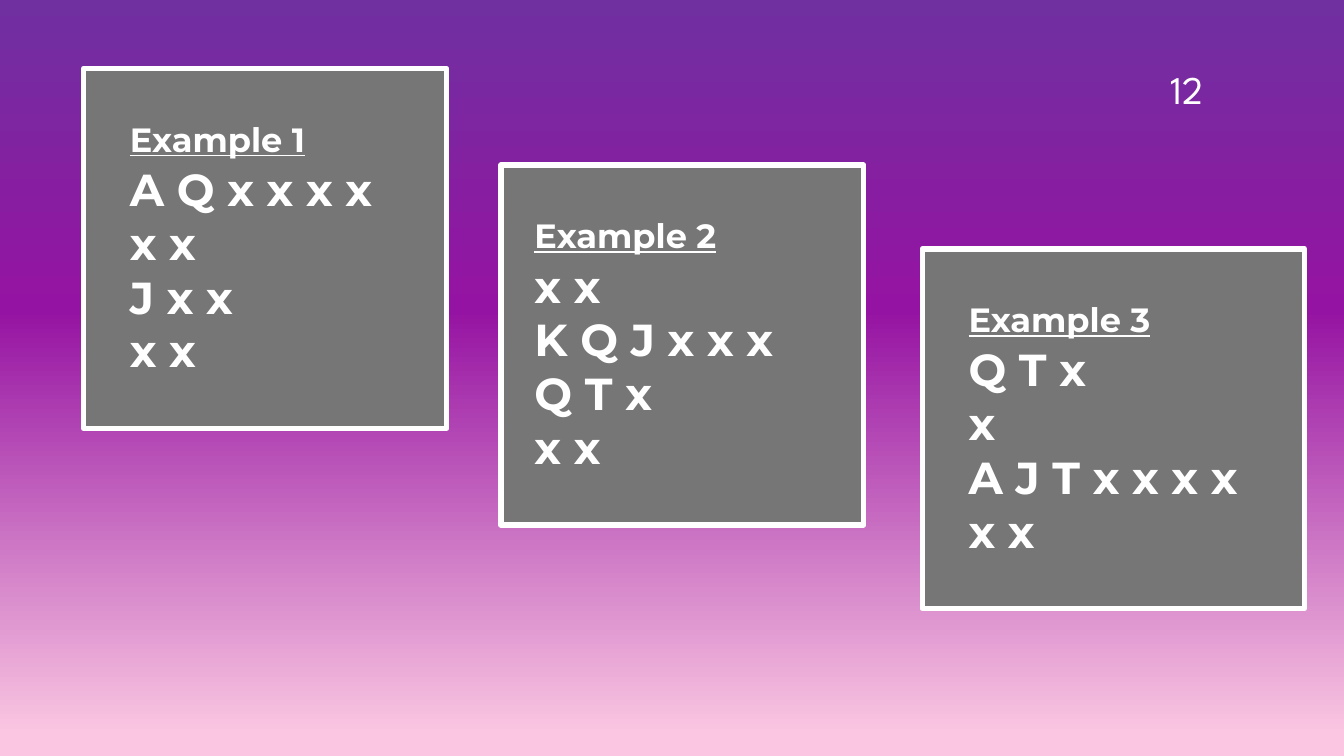
"""Build a slide with three example card hands on a purple gradient."""
from copy import deepcopy

from pptx import Presentation
from pptx.dml.color import RGBColor
from pptx.enum.shapes import MSO_SHAPE
from pptx.enum.text import MSO_ANCHOR, PP_ALIGN
from pptx.oxml.ns import qn
from pptx.util import Pt

WHITE, GREY = "FFFFFF", "767676"
BACKGROUND = [(0, "7030A0"), (0.41, "9513A2"), (0.97, "FAC6E1")]
CARD_HEIGHT = 257
HANDS = [
    {"title": "Example 1", "suits": ["A Q x x x x", "x x", "J x x", "x x"],
     "left": 59.8, "top": 49, "width": 259.2, "indent": 33},
    {"title": "Example 2", "suits": ["x x", "K Q J x x x", "Q T x", "x x"],
     "left": 357.8, "top": 118, "width": 259.2, "indent": 24},
    {"title": "Example 3", "suits": ["Q T x", "x", "A J T x x x x", "x x"],
     "left": 658.8, "top": 177.8, "width": 272.9, "indent": 33},
]
PAGE_NUMBER = "12"


def color(value):
    return RGBColor.from_string(value)


def write(frame, text, size, font="Montserrat", bold=False, underline=False,
          align=PP_ALIGN.LEFT, before=0):
    """Add one formatted paragraph, using the frame's empty first one if there is one."""
    first = frame.paragraphs[0]
    para = frame.add_paragraph() if first.runs else first
    para.alignment = align
    para.space_before = Pt(before)
    span = para.add_run()
    span.text = text
    span.font.name = font
    span.font.size = Pt(size)
    span.font.bold = bold
    span.font.underline = underline
    span.font.color.rgb = color(WHITE)


def paint_background(page):
    """Fill the page with a vertical gradient."""
    fill = page.background.fill
    fill.gradient()
    fill.gradient_angle = 270
    stop_list = page.element.find(".//" + qn("a:gsLst"))
    while len(stop_list) < len(BACKGROUND):
        stop_list.append(deepcopy(stop_list[0]))
    for stop, (position, value) in zip(fill.gradient_stops, BACKGROUND):
        stop.position = position
        stop.color.rgb = color(value)


def add_hand(page, hand):
    """Draw one framed card with its heading and four suits."""
    box = page.shapes.add_shape(MSO_SHAPE.RECTANGLE, Pt(hand["left"]), Pt(hand["top"]),
                                Pt(hand["width"]), Pt(CARD_HEIGHT))
    box.shadow.inherit = False
    box.fill.solid()
    box.fill.fore_color.rgb = color(GREY)
    box.line.color.rgb = color(WHITE)
    box.line.width = Pt(4)
    frame = box.text_frame
    frame.word_wrap = True
    frame.vertical_anchor = MSO_ANCHOR.TOP
    frame.margin_left = Pt(hand["indent"])
    frame.margin_top = Pt(35.7)
    frame.margin_right = frame.margin_bottom = Pt(7.2)
    write(frame, hand["title"], 24, bold=True, underline=True)
    for index, suit in enumerate(hand["suits"]):
        write(frame, suit, 32, bold=True, before=0 if index else 2)


def add_page_number(page):
    box = page.shapes.add_textbox(Pt(815), Pt(23), Pt(66.2), Pt(60.5))
    box.text_frame.word_wrap = True
    box.text_frame.vertical_anchor = MSO_ANCHOR.BOTTOM
    write(box.text_frame, PAGE_NUMBER, 28, font="League Spartan", align=PP_ALIGN.CENTER)


def main():
    deck = Presentation()
    deck.slide_width, deck.slide_height = Pt(960), Pt(540)
    page = deck.slides.add_slide(deck.slide_layouts[6])
    paint_background(page)
    for hand in HANDS:
        add_hand(page, hand)
    add_page_number(page)
    deck.save("out.pptx")


if __name__ == "__main__":
    main()
